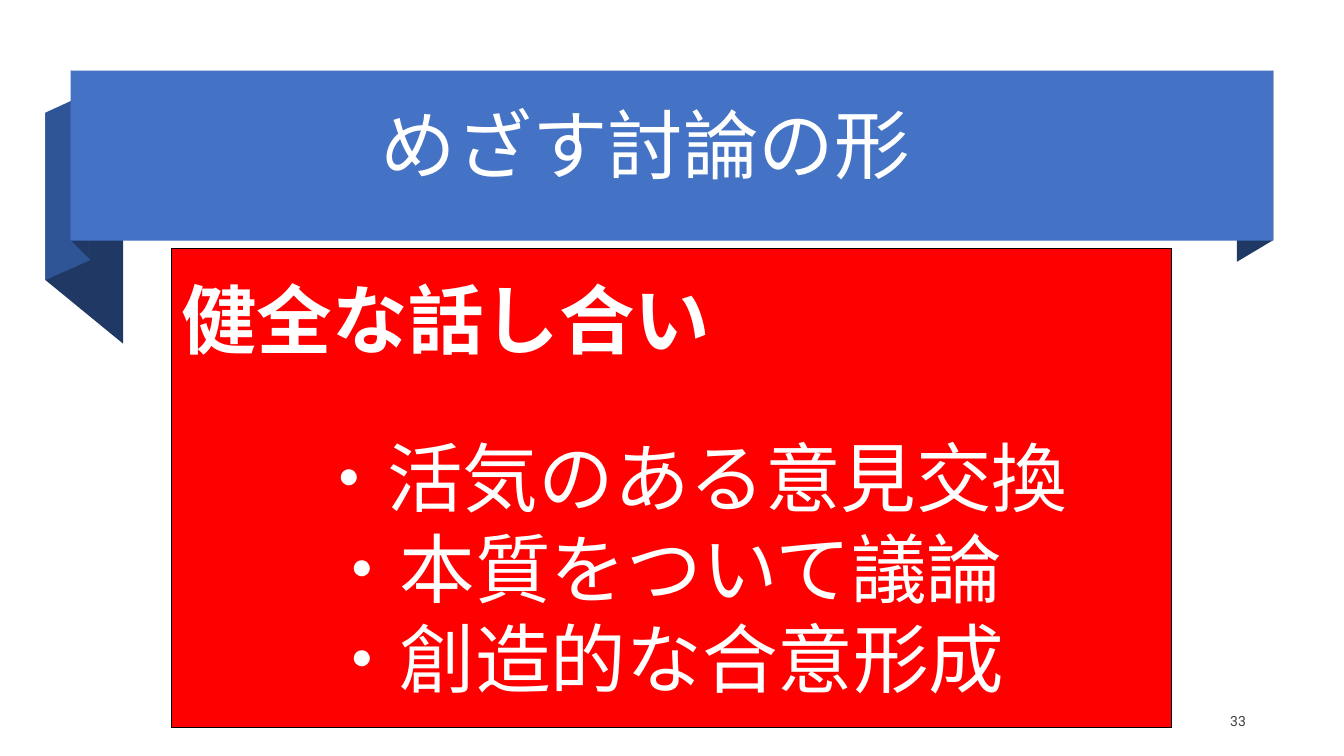
from dataclasses import dataclass

from lxml.etree import SubElement
from pptx import Presentation
from pptx.dml.color import RGBColor
from pptx.enum.shapes import MSO_SHAPE
from pptx.enum.text import MSO_ANCHOR, PP_ALIGN
from pptx.oxml.ns import qn
from pptx.util import Pt


@dataclass(frozen=True)
class Theme:
    """Colours, fonts and type sizes of the slide."""
    banner: RGBColor = RGBColor(0x44, 0x72, 0xC4)
    fold: RGBColor = RGBColor(0x2F, 0x55, 0x97)
    shade: RGBColor = RGBColor(0x20, 0x38, 0x64)
    panel: RGBColor = RGBColor(0xFF, 0x00, 0x00)
    outline: RGBColor = RGBColor(0x00, 0x00, 0x00)
    light: RGBColor = RGBColor(0xFF, 0xFF, 0xFF)
    muted: RGBColor = RGBColor(0x40, 0x40, 0x40)
    japanese: str = "Noto Sans CJK JP"
    latin: str = "Roboto"
    large: int = 54
    small: int = 10


THEME = Theme()

RIBBON_FOLDS = [
    (THEME.shade, [(88, 245.5), (32.4, 200), (32.4, 80.5), (88, 126)]),
    (THEME.fold, [(64, 186), (32.4, 200), (32.4, 80.5), (64, 66)]),
    (THEME.shade, [(64, 185), (51, 172), (51, 50.4), (64, 64)]),
    (THEME.shade, [(909.5, 171.5), (883.5, 187), (883.5, 65.5), (909.5, 50.4)]),
]
GOALS = [("・活気のある意見交換", 93), ("・本質をついて議論", 102), ("・創造的な合意形成", 102)]


def paint(shape, fill, line=None):
    """Give a shape a flat fill and an optional thin outline."""
    shape.shadow.inherit = False
    shape.fill.solid()
    shape.fill.fore_color.rgb = fill
    if line is None:
        shape.line.fill.background()
    else:
        shape.line.color.rgb = line
        shape.line.width = Pt(0.75)


def add_fold(slide, color, points):
    """Draw one folded part of the ribbon."""
    corners = [(Pt(x), Pt(y)) for x, y in points]
    builder = slide.shapes.build_freeform(*corners[0])
    builder.add_line_segments(corners[1:], close=True)
    paint(builder.convert_to_shape(), color)


def add_rectangle(slide, left, top, width, height, fill, line=None):
    """Draw a flat rectangle and return it."""
    shape = slide.shapes.add_shape(
        MSO_SHAPE.RECTANGLE, Pt(left), Pt(top), Pt(width), Pt(height))
    paint(shape, fill, line)
    return shape


def write(paragraph, text, font, size, color, bold=False, align=PP_ALIGN.LEFT):
    """Fill a paragraph and format its run."""
    paragraph.text = text
    paragraph.alignment = align
    run = paragraph.runs[0]
    run.font.name = font
    run.font.size = Pt(size)
    run.font.bold = bold
    run.font.color.rgb = color
    SubElement(run.font._element, qn("a:ea")).set("typeface", font)


def add_label(slide, left, top, width, height):
    """Add a wrapped, vertically centred text box and return its paragraph."""
    box = slide.shapes.add_textbox(Pt(left), Pt(top), Pt(width), Pt(height))
    box.text_frame.word_wrap = True
    box.text_frame.vertical_anchor = MSO_ANCHOR.MIDDLE
    return box.text_frame.paragraphs[0]


def add_goals_panel(slide):
    """Add the panel with its heading and indented goals."""
    panel = add_rectangle(slide, 122.5, 177.3, 714.5, 342.5, THEME.panel, THEME.outline)
    frame = panel.text_frame
    frame.word_wrap = True
    frame.vertical_anchor = MSO_ANCHOR.MIDDLE
    heading = frame.paragraphs[0]
    write(heading, "健全な話し合い", THEME.japanese, THEME.large, THEME.light, bold=True)
    heading.space_after = Pt(48)
    for text, indent in GOALS:
        goal = frame.add_paragraph()
        write(goal, text, THEME.japanese, THEME.large, THEME.light)
        goal._p.get_or_add_pPr().set("marL", str(Pt(indent)))


def main():
    """Build the slide and save it."""
    presentation = Presentation()
    presentation.slide_width, presentation.slide_height = Pt(960), Pt(540)
    slide = presentation.slides.add_slide(presentation.slide_layouts[6])
    for color, points in RIBBON_FOLDS:
        add_fold(slide, color, points)
    add_rectangle(slide, 50.4, 50.4, 859.1, 121.5, THEME.banner)
    title = add_label(slide, 265, 56, 406, 101.5)
    write(title, "めざす討論の形", THEME.japanese, THEME.large, THEME.light)
    title.line_spacing = 0.9
    number = add_label(slide, 843, 502.5, 54, 25)
    write(number, "33", THEME.latin, THEME.small, THEME.muted, align=PP_ALIGN.RIGHT)
    number.space_after = Pt(6)
    add_goals_panel(slide)
    presentation.save("out.pptx")


if __name__ == "__main__":
    main()
